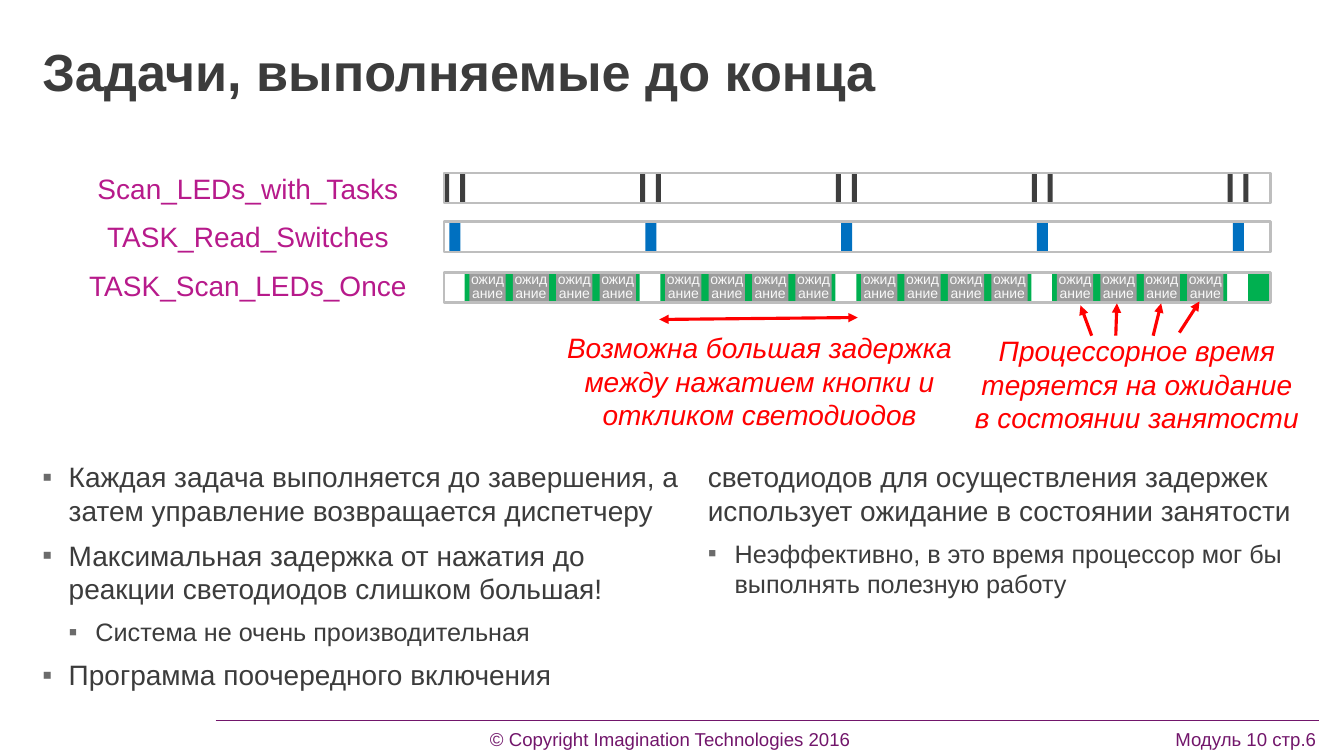
from lxml.etree import SubElement
from pptx import Presentation
from pptx.dml.color import RGBColor as Color
from pptx.enum.shapes import MSO_CONNECTOR as Connector, MSO_SHAPE as Shape
from pptx.enum.text import MSO_ANCHOR as Anchor, PP_ALIGN as Align
from pptx.oxml.ns import qn
from pptx.util import Pt

COLORS = {
    "ink": "3C3C3C", "purple": "72166B", "label": "B71A8B", "note": "FF0000",
    "bullet": "6B6B6B", "frame": "BEBEBE", "scan": "3E3E3E", "read": "0070C0",
    "once": "00B050", "wait": "9C9C9C", "wait_text": "F8F8F8",
}
TITLE = "Задачи, выполняемые до конца"
FOOTER = "\t© Copyright Imagination Technologies 2016\tМодуль 10 стр.6"
FOOTER_TABS = [(461.5, "ctr"), (923, "r")]
POINTS = [
    (0, "Каждая задача выполняется до завершения, а затем управление возвращается диспетчеру"),
    (0, "Максимальная задержка от нажатия до реакции светодиодов слишком большая!"),
    (1, "Система не очень производительная"),
    (0, "Программа поочередного включения светодиодов для осуществления задержек использует ожидание в состоянии занятости"),
    (1, "Неэффективно, в это время процессор мог бы выполнять полезную работу"),
]
LEVELS = [(20, 18.9, 18.9), (18, 38, 19.1)]
WAIT = "ожидание"
TASKS = [
    ("Scan_LEDs_with_Tasks", "scan", 118.8, 123.6, [(0, 3.6), (11.3, 3.6)]),
    ("TASK_Read_Switches", "read", 153.4, 158.4, [(3.7, 7.9)]),
    ("TASK_Scan_LEDs_Once", "once", 187.9, 194.6, [(14.6, 125)]),
]
NOTES = [
    ("Возможна большая задержка между нажатием кнопки и откликом светодиодов", (396.7, 232.6, 291.6, 79.2)),
    ("Процессорное время теряется на ожидание в состоянии занятости", (689, 234.7, 246.2, 79.2)),
]
ARROWS = [
    ((470.9, 228.2), (612.7, 226.8), ("headEnd", "tailEnd")),
    ((779.8, 239.8), (771.8, 218.2), ("tailEnd",)),
    ((797, 239.8), (797.8, 216.7), ("tailEnd",)),
    ((823.7, 239.8), (829.4, 216.7), ("tailEnd",)),
    ((842.4, 237.6), (856.8, 215.3), ("tailEnd",)),
]
TRACK_LEFT, TRACK_WIDTH, TRACK_HEIGHT = 317.3, 590.4, 21.6
CYCLES, PERIOD = 5, 139.9
WAITS, WAIT_START, WAIT_STEP, WAIT_WIDTH = 4, 18, 31, 25.9
LABEL_INSETS = (7.2, 3.6, 7.2, 3.6)

deck = Presentation()
deck.slide_width, deck.slide_height = Pt(960), Pt(540)
slide = deck.slides.add_slide(deck.slide_layouts[6])


def rgb(name):
    return Color.from_string(COLORS[name])


def write(paragraph, text, color, **font):
    run = paragraph.add_run()
    run.text = text
    run.font.color.rgb = rgb(color)
    for key, value in {"name": "Arial", **font}.items():
        setattr(run.font, key, value)


def set_frame(frame, insets, anchor=Anchor.TOP):
    sides = ("margin_left", "margin_top", "margin_right", "margin_bottom")
    margins = dict(zip(sides, map(Pt, insets)))
    for key, value in {"word_wrap": True, "vertical_anchor": anchor, **margins}.items():
        setattr(frame, key, value)
    return frame


def add_text(box, insets=(0, 0, 0, 0)):
    return set_frame(slide.shapes.add_textbox(*map(Pt, box)).text_frame, insets)


def add_label(box, text, color, **font):
    paragraph = add_text(box, LABEL_INSETS).paragraphs[0]
    paragraph.alignment = Align.CENTER
    write(paragraph, text, color, size=Pt(20), **font)


def add_bar(left, top, width, fill=None, line=None):
    bar = slide.shapes.add_shape(Shape.RECTANGLE, *map(Pt, (left, top, width, TRACK_HEIGHT)))
    bar.shadow.inherit = False
    if fill:
        bar.fill.solid()
        bar.fill.fore_color.rgb = rgb(fill)
    else:
        bar.fill.background()
    if line:
        bar.line.color.rgb = rgb(line)
        bar.line.width = Pt(1.75)
    else:
        bar.line.fill.background()
    return bar


def add_line(start, end, color, width, heads=()):
    line = slide.shapes.add_connector(Connector.STRAIGHT, *map(Pt, start + end))
    line.line.color.rgb = rgb(color)
    line.line.width = Pt(width)
    for head in heads:
        SubElement(line.line._get_or_add_ln(), qn(f"a:{head}"), type="triangle")
    SubElement(line._element.spPr, qn("a:effectLst"))


def add_wait(left, top):
    frame = set_frame(add_bar(left, top, WAIT_WIDTH, "wait").text_frame, (0, 5.8, 0, 5.8), Anchor.MIDDLE)
    paragraph = frame.paragraphs[0]
    paragraph.alignment, paragraph.line_spacing = Align.CENTER, 0.8
    write(paragraph, WAIT, "wait_text", size=Pt(10))


def add_footer():
    paragraph = add_text((17.3, 522, 925.9, 14.4)).paragraphs[0]
    paragraph.line_spacing = 0.9
    tabs = SubElement(paragraph._p.get_or_add_pPr(), qn("a:tabLst"))
    for position, alignment in FOOTER_TABS:
        SubElement(tabs, qn("a:tab"), pos=str(Pt(position)), algn=alignment)
    write(paragraph, FOOTER, "purple", size=Pt(13.3))
    add_line((154.1, 514.8), (942.5, 514.8), "purple", 0.5)


def add_points():
    frame = add_text((30.2, 328.3, 913, 185.8))
    frame._txBody.bodyPr.set("numCol", "2")
    for index, (level, text) in enumerate(POINTS):
        paragraph = frame.add_paragraph() if index else frame.paragraphs[0]
        size, margin, hanging = LEVELS[level]
        paragraph.level, paragraph.space_after = level, Pt(8)
        properties = paragraph._p.get_or_add_pPr()
        properties.set("marL", str(Pt(margin)))
        properties.set("indent", str(-Pt(hanging)))
        bullet_color = SubElement(properties, qn("a:buClr"))
        SubElement(bullet_color, qn("a:srgbClr"), val=COLORS["bullet"])
        SubElement(properties, qn("a:buFont"), typeface="Arial")
        SubElement(properties, qn("a:buChar"), char="▪")
        write(paragraph, text, "ink", size=Pt(size))


def add_task(name, color, label_top, top, pulses):
    add_label((54, label_top, 246.2, 30.2), name, "label")
    for cycle in range(CYCLES):
        start = TRACK_LEFT + cycle * PERIOD
        for offset, width in pulses:
            left = start + offset
            add_bar(left, top, min(width, TRACK_LEFT + TRACK_WIDTH - left), color)
        if color == "once" and cycle < CYCLES - 1:
            for wait in range(WAITS):
                add_wait(start + WAIT_START + wait * WAIT_STEP, top)
    add_bar(TRACK_LEFT, top, TRACK_WIDTH, line="frame")


add_footer()
heading = add_text((30.2, 35.3, 913, 33.8)).paragraphs[0]
heading.line_spacing = 0.85
write(heading, TITLE, "ink", size=Pt(37.3), bold=True)
add_points()
for task in TASKS:
    add_task(*task)
for note, box in NOTES:
    add_label(box, note, "note", italic=True)
for start, end, heads in ARROWS:
    add_line(start, end, "note", 2.25, heads)
deck.save("out.pptx")
